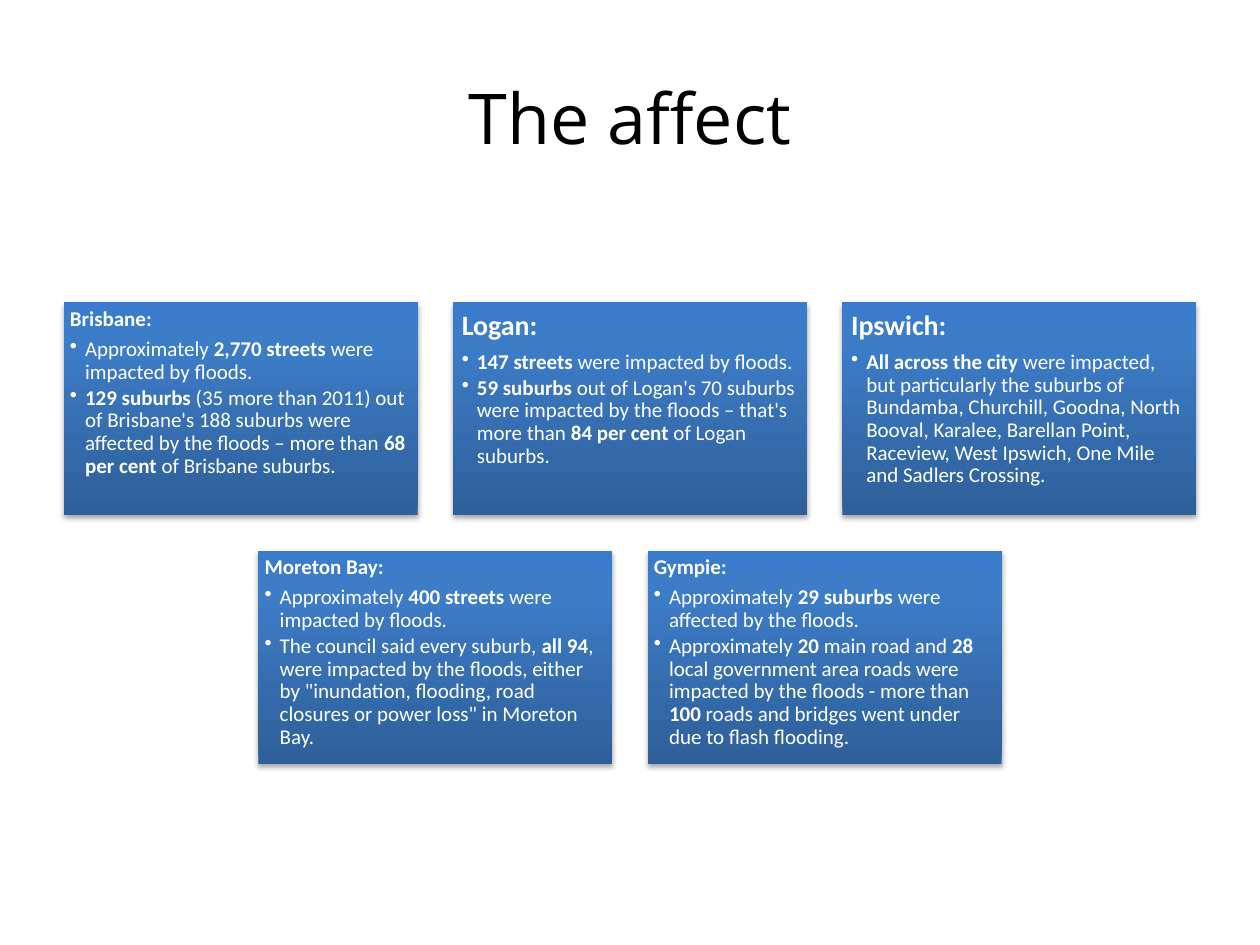
from lxml import etree
from pptx import Presentation
from pptx.dml.color import RGBColor
from pptx.enum.shapes import MSO_SHAPE
from pptx.enum.text import MSO_ANCHOR, PP_ALIGN
from pptx.oxml import parse_xml
from pptx.oxml.ns import nsdecls, qn
from pptx.util import Inches, Pt

COLOURS = {"title": "000000", "text": "FFFFFF", "shadow": "000000",
           "bottom": "2F5F99", "middle": "3D7CC7", "top": "3A7CCB"}
GRADIENT = [(0, "bottom"), (80, "middle"), (100, "top")]

CARD_WIDTH, CARD_HEIGHT, GAP = 2.81, 1.69, 0.28
FIRST_TOP = 2.4

# Each card: heading, heading size, inset, bullets; asterisks enclose bold words.
ROWS = [
    [
        ("Brisbane:", 12, 0.05, [
            "Approximately *2,770 streets *were impacted by floods.",
            "*129 suburbs *(35 more than 2011) out of Brisbane's 188 suburbs were "
            "affected by the floods – more than *68 per cent *of Brisbane suburbs.",
        ]),
        ("Logan:", 16, 0.07, [
            "*147 streets *were impacted by floods.",
            "*59 suburbs *out of Logan's 70 suburbs were impacted by the floods – "
            "that's more than *84 per cent *of Logan suburbs.",
        ]),
        ("Ipswich:", 16, 0.07, [
            "*All across the city* were impacted, but particularly the suburbs of "
            "Bundamba, Churchill, Goodna, North Booval, Karalee, Barellan Point, "
            "Raceview, West Ipswich, One Mile and Sadlers Crossing.",
        ]),
    ],
    [
        ("Moreton Bay:", 12, 0.05, [
            "Approximately *400 streets *were impacted by floods.",
            "The council said every suburb, *all 94*, were impacted by the floods, "
            'either by "inundation, flooding, road closures or power loss" in '
            "Moreton Bay.",
        ]),
        ("Gympie:", 12, 0.05, [
            "Approximately *29 suburbs *were affected by the floods.",
            "Approximately *20* main road and *28* local government area roads were "
            "impacted by the floods - more than *100* roads and bridges went under "
            "due to flash flooding.",
        ]),
    ],
]


def add_span(para, text, size, name, colour, bold=False):
    span = para.add_run()
    span.text = text
    for key, value in {"size": Pt(size), "name": name, "bold": bold}.items():
        setattr(span.font, key, value)
    span.font.color.rgb = RGBColor.from_string(COLOURS[colour])


def style_card(card):
    """Give the card its three-stop gradient and soft shadow, without an outline."""
    card.line.fill.background()
    card.shadow.inherit = False
    stops = "".join(
        f'<a:gs pos="{place * 1000}"><a:srgbClr val="{COLOURS[key]}"/></a:gs>'
        for place, key in GRADIENT)
    properties = card.fill._xPr
    properties.find(qn("a:prstGeom")).addnext(parse_xml(
        f'<a:gradFill {nsdecls("a")} rotWithShape="1"><a:gsLst>{stops}</a:gsLst>'
        '<a:lin ang="16200000" scaled="0"/></a:gradFill>'))
    properties.find(qn("a:effectLst")).append(parse_xml(
        f'<a:outerShdw {nsdecls("a")} blurRad="{Pt(3.1)}" dist="{Pt(1.8)}" '
        f'dir="5400000" rotWithShape="0"><a:srgbClr val="{COLOURS["shadow"]}">'
        '<a:alpha val="35000"/></a:srgbClr></a:outerShdw>'))


deck = Presentation()
deck.slide_width, deck.slide_height = Inches(10), Inches(7.5)
page = deck.slides.add_slide(deck.slide_layouts[6])

title = page.shapes.add_textbox(Inches(0.5), Inches(0.3), Inches(9), Inches(1.25))
title.text_frame.word_wrap = True
title.text_frame.vertical_anchor = MSO_ANCHOR.MIDDLE
title_para = title.text_frame.paragraphs[0]
title_para.alignment = PP_ALIGN.CENTER
add_span(title_para, "The affect", 40, "Open Sans", "title")

for row, cards in enumerate(ROWS):
    row_width = len(cards) * CARD_WIDTH + (len(cards) - 1) * GAP
    row_left = (10 - row_width) / 2
    top = FIRST_TOP + row * (CARD_HEIGHT + GAP)
    for column, (heading, heading_size, inset, bullets) in enumerate(cards):
        left = row_left + column * (CARD_WIDTH + GAP)
        card = page.shapes.add_shape(
            MSO_SHAPE.RECTANGLE, Inches(left), Inches(top),
            Inches(CARD_WIDTH), Inches(CARD_HEIGHT))
        style_card(card)

        frame = card.text_frame
        frame.word_wrap = True
        frame.vertical_anchor = MSO_ANCHOR.TOP
        for side in ("left", "top", "right", "bottom"):
            setattr(frame, f"margin_{side}", Inches(inset))

        para = frame.paragraphs[0]
        heading_format = {"alignment": PP_ALIGN.LEFT, "line_spacing": 0.9,
                          "space_after": Pt(heading_size * 0.35)}
        for key, value in heading_format.items():
            setattr(para, key, value)
        add_span(para, heading, heading_size, "Calibri", "text", bold=True)

        for bullet in bullets:
            para = frame.add_paragraph()
            para_properties = para._p.get_or_add_pPr()
            para_properties.set("marL", str(Inches(0.12)))
            para_properties.set("indent", str(-Inches(0.12)))
            etree.SubElement(para_properties, qn("a:buChar")).set("char", "•")
            bullet_format = {"level": 1, "alignment": PP_ALIGN.LEFT,
                             "line_spacing": 0.9, "space_after": Pt(1.8)}
            for key, value in bullet_format.items():
                setattr(para, key, value)
            for index, text in enumerate(bullet.split("*")):
                if text:
                    add_span(para, text, 12, "Calibri", "text", bold=index % 2 == 1)

deck.save("out.pptx")
